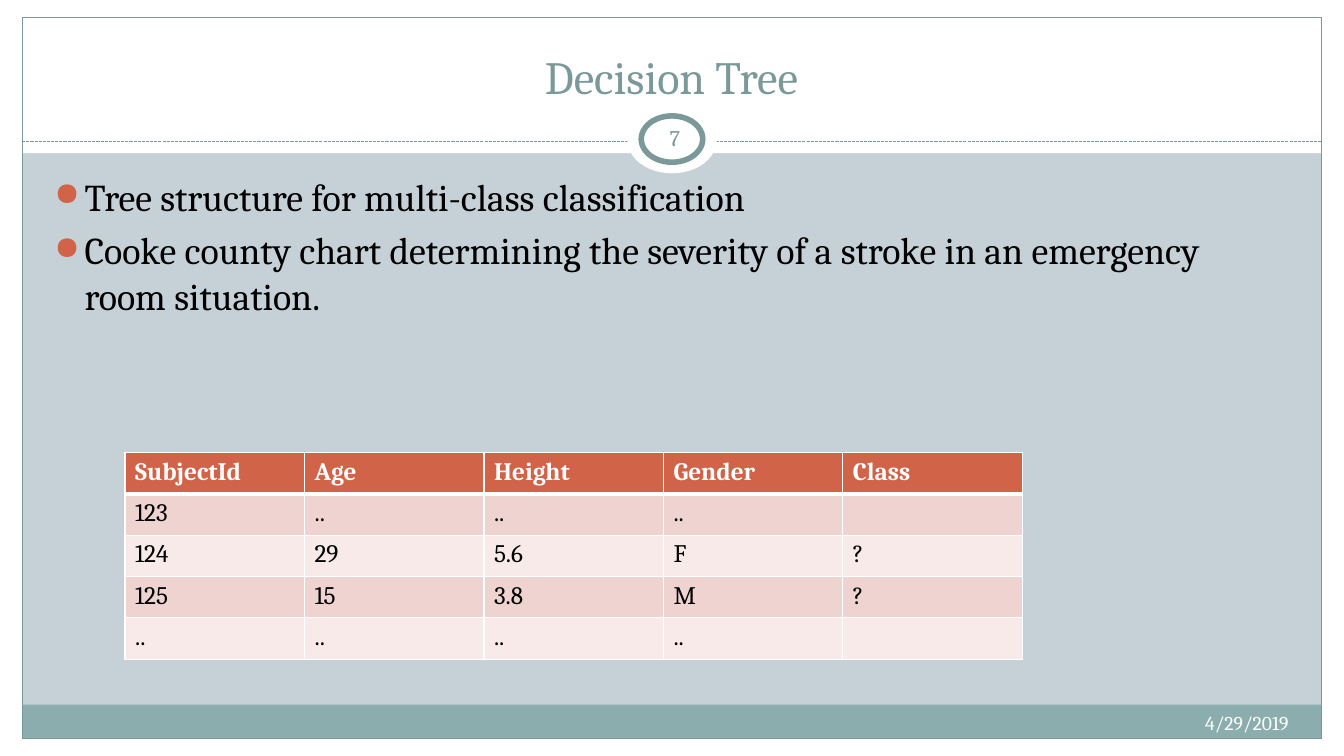
from lxml.etree import SubElement
from pptx import Presentation
from pptx.dml.color import RGBColor
from pptx.enum.dml import MSO_LINE
from pptx.enum.shapes import MSO_CONNECTOR, MSO_SHAPE
from pptx.enum.text import MSO_ANCHOR as Anchor, PP_ALIGN as Align
from pptx.oxml.ns import qn
from pptx.util import Inches, Pt

TITLE = "Decision Tree"
POINTS = [
    "Tree structure for multi-class classification",
    "Cooke county chart determining the severity of a stroke in an emergency room situation.",
]
SUBJECTS = [
    ("SubjectId", "Age", "Height", "Gender", "Class"),
    ("123", "..", "..", "..", ""),
    ("124", "29", "5.6", "F", "?"),
    ("125", "15", "3.8", "M", "?"),
    ("..", "..", "..", "..", ""),
]
PAGE_NUMBER = "7"
DATE = "4/29/2019"

FONT = "Cambria"
WHITE = RGBColor(0xFF, 0xFF, 0xFF)
BLACK = RGBColor(0, 0, 0)
MIST = RGBColor(0xC5, 0xD1, 0xD7)
SAGE = RGBColor(0x8C, 0xAD, 0xAE)
TEAL = RGBColor(0x7C, 0x99, 0x9A)
RUST = RGBColor(0xD1, 0x63, 0x49)
ROSE = RGBColor(0xEE, 0xD3, 0xD0)
BLUSH = RGBColor(0xF7, 0xEA, 0xE9)

WIDTH, HEIGHT = 13.33, 7.5
SIDE, EDGE = 0.22, 0.17
INNER = WIDTH - 2 * SIDE
HEADER, RULE, FOOTER = 1.52, 1.4, 0.34
TEXT_LEFT = 2 * SIDE
COLUMN, ROW = 1.78, 0.41

deck = Presentation()
deck.slide_width, deck.slide_height = Inches(WIDTH), Inches(HEIGHT)
page = deck.slides.add_slide(deck.slide_layouts[6])
page.background.fill.solid()
page.background.fill.fore_color.rgb = MIST


def add_figure(kind, left, top, width, height, fill=None, line=None, weight=0.75):
    figure = page.shapes.add_shape(kind, *map(Inches, (left, top, width, height)))
    figure.shadow.inherit = False
    if fill is None:
        figure.fill.background()
    else:
        figure.fill.solid()
        figure.fill.fore_color.rgb = fill
    if line is None:
        figure.line.fill.background()
    else:
        figure.line.color.rgb = line
        figure.line.width = Pt(weight)


def write(para, text, size=18, color=BLACK, bold=False, align=Align.LEFT):
    para.alignment = align
    span = para.add_run()
    span.text = text
    span.font.name, span.font.size = FONT, Pt(size)
    span.font.bold, span.font.color.rgb = bold, color


def add_text(lines, left, top, width, height, anchor=Anchor.TOP, inset=0.1, **style):
    box = page.shapes.add_textbox(*map(Inches, (left, top, width, height)))
    frame = box.text_frame
    frame.word_wrap, frame.vertical_anchor = True, anchor
    frame.margin_left = frame.margin_right = Inches(inset)
    for index, text in enumerate(lines):
        para = frame.add_paragraph() if index else frame.paragraphs[0]
        write(para, text, **style)
    return frame


def add_bullet(para):
    para.space_before = Pt(6)
    props = para._p.get_or_add_pPr()
    props.set("marL", str(Inches(0.3)))
    props.set("indent", str(Inches(-0.3)))
    color = SubElement(props, qn("a:buClr"))
    SubElement(color, qn("a:srgbClr"), val=str(RUST))
    SubElement(props, qn("a:buSzPct"), val="85000")
    SubElement(props, qn("a:buChar"), char="●")


def add_border(cell, side, weight):
    border = SubElement(cell._tc.get_or_add_tcPr(), qn(f"a:ln{side}"), w=str(Pt(weight)))
    fill = SubElement(border, qn("a:solidFill"))
    SubElement(fill, qn("a:srgbClr"), val=str(WHITE))


def add_subject_table():
    rows, columns = len(SUBJECTS), len(SUBJECTS[0])
    size = (Inches(COLUMN * columns), Inches(ROW * rows))
    table = page.shapes.add_table(rows, columns, Inches(1.24), Inches(4.49), *size).table
    for column in table.columns:
        column.width = Inches(COLUMN)
    for r, record in enumerate(SUBJECTS):
        table.rows[r].height = Inches(ROW)
        header = r == 0
        for c, value in enumerate(record):
            cell = table.cell(r, c)
            weights = {"L": 1, "R": 1, "T": 3 if r == 1 else 1, "B": 3 if header else 1}
            for side, weight in weights.items():
                add_border(cell, side, weight)
            cell.fill.solid()
            cell.fill.fore_color.rgb = RUST if header else (BLUSH, ROSE)[r % 2]
            if value:
                write(cell.text_frame.paragraphs[0], value, bold=header,
                      color=WHITE if header else BLACK)


for margin in [
    (0, HEIGHT - EDGE, WIDTH, EDGE),
    (0, 0, WIDTH, HEADER),
    (0, 0, SIDE, HEIGHT),
    (WIDTH - SIDE, 0, SIDE, HEIGHT),
]:
    add_figure(MSO_SHAPE.RECTANGLE, *margin, fill=WHITE)
add_figure(MSO_SHAPE.RECTANGLE, SIDE, HEIGHT - EDGE - FOOTER, INNER, FOOTER, fill=SAGE)
add_figure(MSO_SHAPE.RECTANGLE, SIDE, EDGE, INNER, HEIGHT - 2 * EDGE, line=TEAL)

rule = page.shapes.add_connector(
    MSO_CONNECTOR.STRAIGHT, *map(Inches, (SIDE, RULE, WIDTH - SIDE, RULE)))
rule.line.color.rgb, rule.line.width = TEAL, Pt(0.75)
rule.line.dash_style = MSO_LINE.SQUARE_DOT
SubElement(rule._element.spPr, qn("a:effectLst"))

add_figure(MSO_SHAPE.OVAL, (WIDTH - 0.89) / 2, 1.05, 0.89, 0.67, fill=WHITE)
add_figure(MSO_SHAPE.OVAL, (WIDTH - 0.61) / 2, 1.15, 0.61, 0.46,
           fill=WHITE, line=TEAL, weight=4)

add_text([TITLE], TEXT_LEFT, 0.25, 12.44, 0.83, anchor=Anchor.BOTTOM,
         size=33, color=TEAL, align=Align.CENTER)
add_text([DATE], 8.44, 7, 4.44, 0.4, size=14, color=WHITE, align=Align.RIGHT)
add_text([PAGE_NUMBER], 6.36, 1.12, 0.67, 0.48, anchor=Anchor.MIDDLE, inset=0.05,
         size=16, color=TEAL, align=Align.CENTER)
body = add_text(POINTS, TEXT_LEFT, 1.67, 12.4, 5, size=27)
for point in body.paragraphs:
    add_bullet(point)
add_subject_table()

deck.save("out.pptx")
